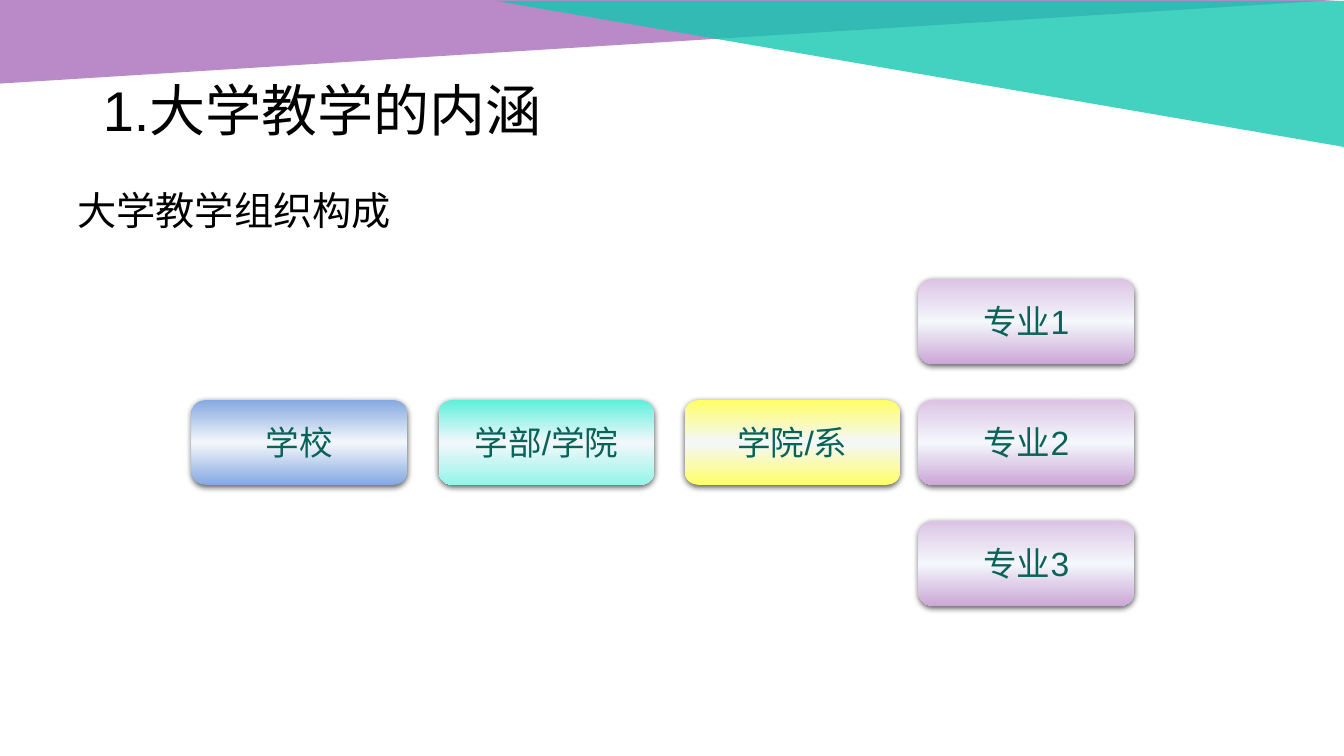
from dataclasses import dataclass

from lxml.etree import SubElement
from pptx import Presentation
from pptx.dml.color import RGBColor
from pptx.enum.shapes import MSO_SHAPE
from pptx.enum.text import MSO_ANCHOR, PP_ALIGN
from pptx.oxml.ns import qn
from pptx.util import Inches, Pt


@dataclass(frozen=True)
class Theme:
    latin: str = "Arial"
    chinese: str = "Noto Sans CJK SC"
    title_size: int = 40
    subtitle_size: int = 28
    unit_size: int = 24
    ink: str = "000000"
    unit_ink: str = "0A6358"
    shine: str = "F4F7FC"
    purple: str = "A86CBB"
    teal: str = "13C7AF"
    band_opacity: int = 80
    shadow_opacity: int = 63


THEME = Theme()
WIDTH, HEIGHT = 13.33, 7.5

TITLE = "1.大学教学的内涵"
SUBTITLE = "大学教学组织构成"
LEVELS = [
    (["学校"], ("85A9E0", "85A9E0")),
    (["学部/学院"], ("5FF0DC", "94F5E8")),
    (["学院/系"], ("FFFF66", "FFFF66")),
    (["专业1", "专业2", "专业3"], ("DCC4E4", "CBA7D6")),
]
BANDS = [
    ((0, 0, 13.28, 0.83), THEME.purple, ["flipV"]),
    ((4.92, 0.01, 8.42, 1.45), THEME.teal, ["flipH", "flipV"]),
]
COLUMN_LEFTS = [1.9, 4.35, 6.79, 9.11]
MIDDLE_ROW, ROW_PITCH = 3.97, 1.2
UNIT_WIDTH, UNIT_HEIGHT = 2.14, 0.84


def add_color(parent, color, opacity=100):
    node = SubElement(parent, qn("a:srgbClr"), val=color)
    if opacity < 100:
        SubElement(node, qn("a:alpha"), val=str(opacity * 1000))


def write(shape, words, size, color, font, align, anchor, spacing=1.0):
    frame = shape.text_frame
    frame.word_wrap = True
    frame.vertical_anchor = anchor
    paragraph = frame.paragraphs[0]
    paragraph.alignment = align
    paragraph.line_spacing = spacing
    paragraph.space_before = Pt(0)
    run = paragraph.add_run()
    run.text = words
    run.font.size = Pt(size)
    run.font.color.rgb = RGBColor.from_string(color)
    run.font.name = font
    SubElement(run.font._element, qn("a:ea"), typeface=THEME.chinese)


def add_band(slide, box, color, flips):
    band = slide.shapes.add_shape(MSO_SHAPE.RIGHT_TRIANGLE, *map(Inches, box))
    band.shadow.inherit = False
    band.line.fill.background()
    band.fill.solid()
    band.fill.fore_color.rgb = RGBColor.from_string(color)
    tint = band.element.spPr.find(qn("a:solidFill"))[0]
    SubElement(tint, qn("a:alpha"), val=str(THEME.band_opacity * 1000))
    for flip in flips:
        band.element.spPr.xfrm.set(flip, "1")
    return band


def add_unit(slide, words, left, top, edges):
    unit = slide.shapes.add_shape(
        MSO_SHAPE.ROUNDED_RECTANGLE,
        *map(Inches, (left, top, UNIT_WIDTH, UNIT_HEIGHT)),
    )
    unit.line.fill.background()
    unit.shadow.inherit = False
    properties = unit.element.spPr
    effects = properties.find(qn("a:effectLst"))
    shadow = SubElement(
        effects, qn("a:outerShdw"), blurRad=str(Pt(4.5)), dist=str(Pt(1.5)),
        dir="5400000", algn="ctr", rotWithShape="0",
    )
    add_color(shadow, "000000", THEME.shadow_opacity)

    unit.fill.gradient()
    gradient = properties.find(qn("a:gradFill"))
    for child in list(gradient):
        gradient.remove(child)
    stops = SubElement(gradient, qn("a:gsLst"))
    for share, color in zip((0, 50, 100), (edges[0], THEME.shine, edges[1])):
        add_color(SubElement(stops, qn("a:gs"), pos=str(share * 1000)), color)
    SubElement(gradient, qn("a:lin"), ang="5400000", scaled="0")
    write(unit, words, THEME.unit_size, THEME.unit_ink, THEME.latin,
          PP_ALIGN.CENTER, MSO_ANCHOR.MIDDLE)


def main():
    deck = Presentation()
    deck.slide_width, deck.slide_height = Inches(WIDTH), Inches(HEIGHT)
    slide = deck.slides.add_slide(deck.slide_layouts[5])

    title = slide.shapes.title
    title.left, title.top, title.width, title.height = map(
        Inches, (0.92, 0.4, 11.5, 1.45))
    write(title, TITLE, THEME.title_size, THEME.ink, THEME.latin,
          PP_ALIGN.LEFT, MSO_ANCHOR.MIDDLE, 0.9)

    for box, color, flips in BANDS:
        band = add_band(slide, box, color, flips)
        title.element.addprevious(band.element)

    subtitle = slide.shapes.add_textbox(*map(Inches, (0.67, 1.85, 12, 4.98)))
    write(subtitle, SUBTITLE, THEME.subtitle_size, THEME.ink, THEME.chinese,
          PP_ALIGN.JUSTIFY, MSO_ANCHOR.TOP, 0.9)

    for left, (units, edges) in zip(COLUMN_LEFTS, LEVELS):
        first_row = MIDDLE_ROW - ROW_PITCH * (len(units) - 1) / 2
        for row, words in enumerate(units):
            add_unit(slide, words, left, first_row + row * ROW_PITCH, edges)

    deck.save("out.pptx")


if __name__ == "__main__":
    main()
